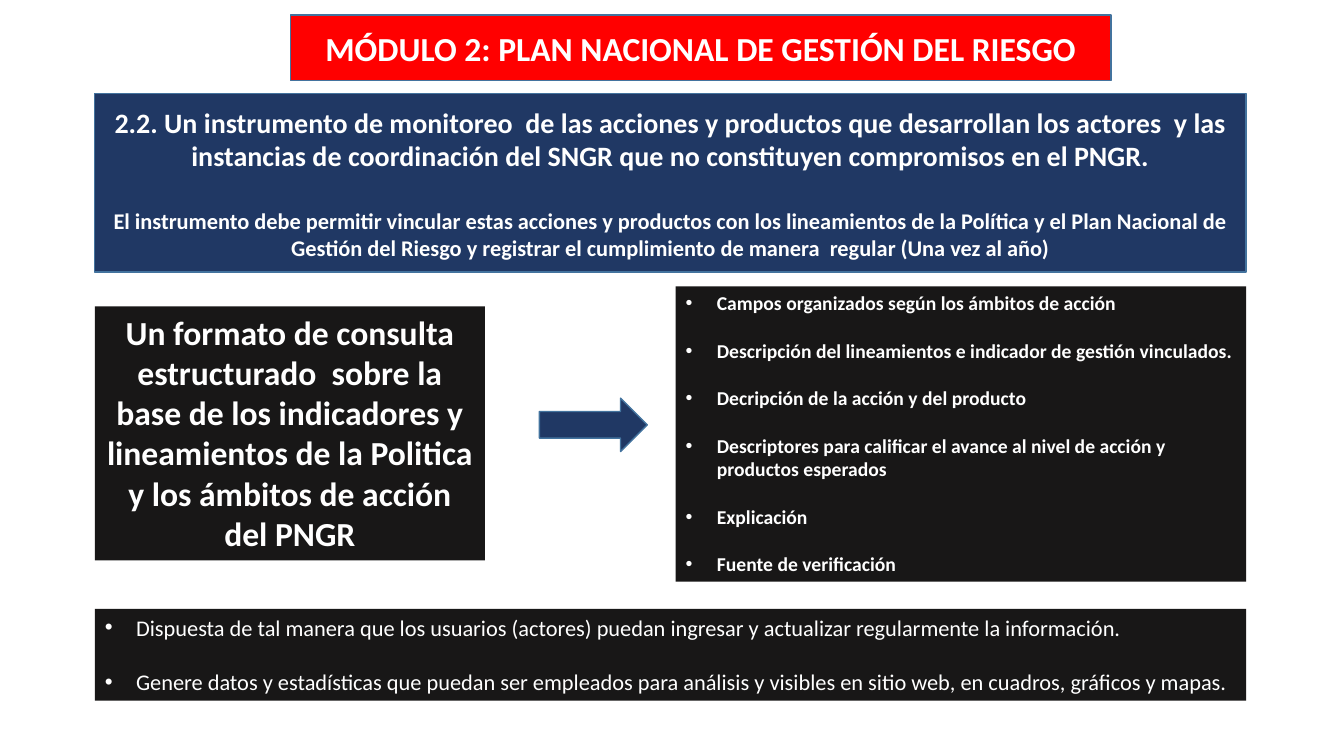
from lxml import etree
from pptx import Presentation
from pptx import util as u
from pptx.dml.color import RGBColor
from pptx.enum import shapes, text
from pptx.oxml import ns

RED, NAVY, BLACK, WHITE, EDGE = "FF0000", "203864", "181717", "FFFFFF", "43739E"
LEFT, WIDTH = 0.94, 11.42
INDENT = 0.31

HEADING = "MÓDULO 2: PLAN NACIONAL DE GESTIÓN DEL RIESGO"
INSTRUMENT = (
    "2.2. Un instrumento de monitoreo  de las acciones y productos que "
    "desarrollan los actores  y las instancias de coordinación del SNGR que no "
    "constituyen compromisos en el PNGR."
)
PURPOSE = (
    "El instrumento debe permitir vincular estas acciones y productos con los "
    "lineamientos de la Política y el Plan Nacional de Gestión del Riesgo y "
    "registrar el cumplimiento de manera  regular (Una vez al año)"
)
FORMAT = (
    "Un formato de consulta estructurado  sobre la base de los indicadores y "
    "lineamientos de la Politica y los ámbitos de acción del PNGR"
)
FIELDS = [
    "Campos organizados según los ámbitos de acción",
    "Descripción del lineamientos e indicador de gestión vinculados.",
    "Decripción de la acción y del producto",
    "Descriptores para calificar el avance al nivel de acción y productos esperados",
    "Explicación",
    "Fuente de verificación",
]
REQUIREMENTS = [
    "Dispuesta de tal manera que los usuarios (actores) puedan ingresar y "
    "actualizar regularmente la información.",
    "Genere datos y estadísticas que puedan ser empleados para análisis y "
    "visibles en sitio web, en cuadros, gráficos y mapas.",
]


def color(hex_string):
    return RGBColor.from_string(hex_string)


def place(part, box):
    part.left, part.top, part.width, part.height = map(u.Inches, box)


def paint(part, fill, edge=None):
    part.fill.solid()
    part.fill.fore_color.rgb = color(fill)
    if edge:
        part.line.color.rgb = color(edge)
        part.line.width = u.Pt(1)
    else:
        part.line.fill.background()


def add_panel(slide, kind, box, fill, edge=None):
    panel = slide.shapes.add_shape(kind, *map(u.Inches, box))
    panel.shadow.inherit = False
    paint(panel, fill, edge)
    return panel


def write(part, lines, anchor, align=text.PP_ALIGN.CENTER, bold=True):
    """Fill a part with paragraphs given as (wording, size, space before)."""
    frame = part.text_frame
    frame.word_wrap = True
    frame.auto_size = text.MSO_AUTO_SIZE.NONE
    frame.vertical_anchor = anchor
    for index, (wording, size, gap) in enumerate(lines):
        paragraph = frame.add_paragraph() if index else frame.paragraphs[0]
        paragraph.alignment = align
        paragraph.space_before = u.Pt(gap)
        run = paragraph.add_run()
        run.text = wording
        run.font.name = "Calibri"
        run.font.size = u.Pt(size)
        run.font.bold = bold
        run.font.color.rgb = color(WHITE)


def add_heading(title, box):
    place(title, box)
    paint(title, RED, EDGE)
    write(title, [(HEADING, 24, 0)], text.MSO_ANCHOR.MIDDLE)


def add_instrument(slide, box):
    panel = add_panel(slide, shapes.MSO_SHAPE.RECTANGLE, box, NAVY, EDGE)
    write(panel, [(INSTRUMENT, 20, 0), (PURPOSE, 16, 24.4)], text.MSO_ANCHOR.MIDDLE)


def add_format(slide, box):
    panel = add_panel(slide, shapes.MSO_SHAPE.RECTANGLE, box, BLACK)
    write(panel, [(FORMAT, 24, 0)], text.MSO_ANCHOR.TOP)


def add_list(body, box, items, size, bold):
    """Turn a body placeholder into a dark list, one line of gap between items."""
    place(body, box)
    paint(body, BLACK)
    gap = round(size * 1.22, 1)
    lines = [(item, size, gap if index else 0) for index, item in enumerate(items)]
    write(body, lines, text.MSO_ANCHOR.TOP, text.PP_ALIGN.LEFT, bold)
    for paragraph in body.text_frame.paragraphs:
        properties = paragraph._p.get_or_add_pPr()
        properties.set("marL", str(u.Inches(INDENT)))
        properties.set("indent", str(-u.Inches(INDENT)))
        etree.SubElement(properties, ns.qn("a:buFont")).set("typeface", "Arial")
        etree.SubElement(properties, ns.qn("a:buChar")).set("char", "•")


def main():
    deck = Presentation()
    deck.slide_width, deck.slide_height = u.Inches(13.33), u.Inches(7.5)
    slide = deck.slides.add_slide(deck.slide_layouts.get_by_name("Two Content"))
    title, fields, requirements = list(slide.placeholders)[:3]

    add_heading(title, (2.88, 0.15, 8.14, 0.65))
    add_instrument(slide, (LEFT, 0.93, WIDTH, 1.77))
    add_format(slide, (LEFT, 3.04, 3.87, 2.52))
    add_panel(slide, shapes.MSO_SHAPE.RIGHT_ARROW, (5.35, 3.95, 1.07, 0.53), NAVY, EDGE)
    add_list(fields, (6.7, 2.84, 5.66, 2.93), FIELDS, 14, True)
    add_list(requirements, (LEFT, 6.04, WIDTH, 0.91), REQUIREMENTS, 16, False)
    deck.save("out.pptx")


if __name__ == "__main__":
    main()
